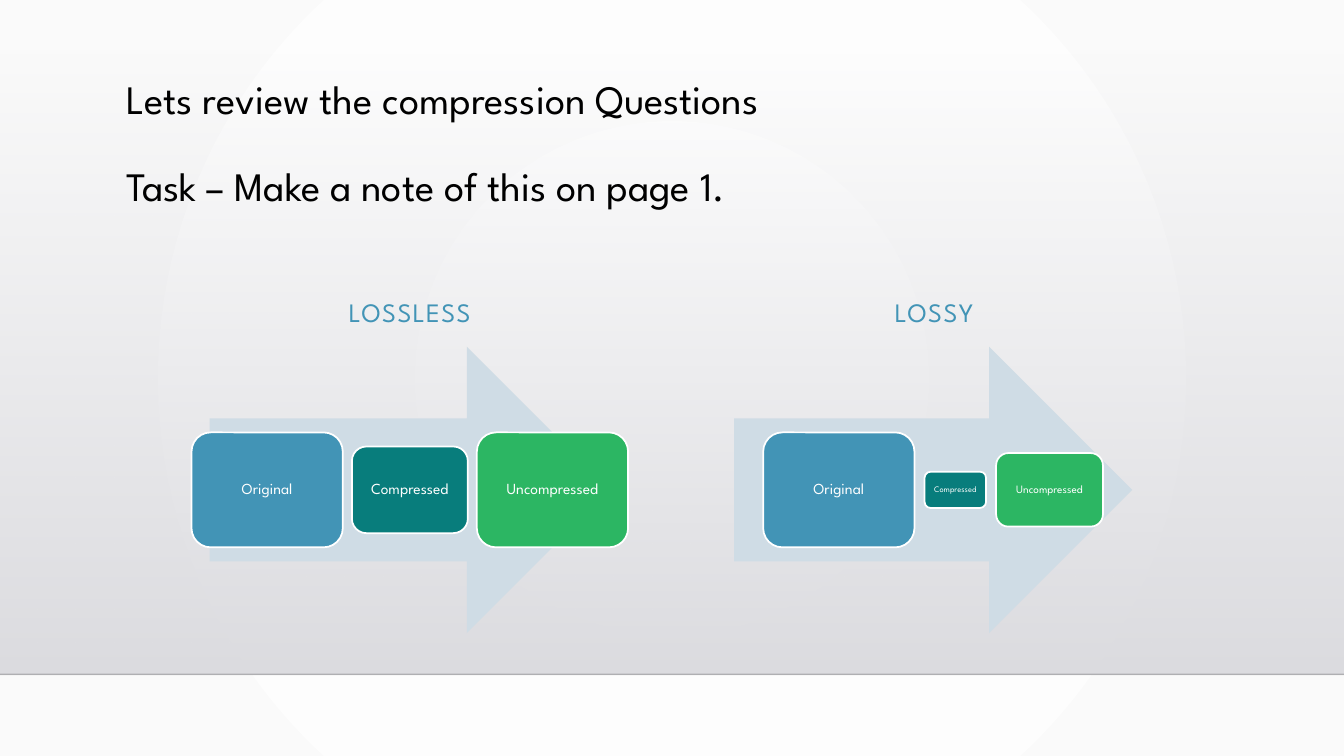
from lxml import etree
from pptx import Presentation
from pptx import util as u
from pptx.dml.color import RGBColor
from pptx.enum import shapes, text
from pptx.oxml import parse_xml
from pptx.oxml.ns import nsdecls, qn

FONT = "League Spartan"
BLACK = RGBColor(0x00, 0x00, 0x00)
WHITE = RGBColor(0xFF, 0xFF, 0xFF)
BLUE = RGBColor(0x42, 0x94, 0xB6)
TEAL = RGBColor(0x08, 0x7D, 0x7C)
GREEN = RGBColor(0x2C, 0xB6, 0x63)
PALE_BLUE = RGBColor(0xCF, 0xDC, 0xE5)
PANEL_TOP = RGBColor(0xDC, 0xDC, 0xE0)
PANEL_BOTTOM = RGBColor(0xDE, 0xDE, 0xE2)
RULE = RGBColor(0x00, 0x00, 0x01)

WIDTH, HEIGHT = 13.33, 7.5
PANEL_Y, FLOOR_Y = 0.51, 6.69
ARROW_Y, ARROW_H = 3.44, 2.84
MIDDLE_Y = ARROW_Y + ARROW_H / 2


def place(shape, left, top, width, height):
    shape.left, shape.top = u.Inches(left), u.Inches(top)
    shape.width, shape.height = u.Inches(width), u.Inches(height)


def style(para, size, color, spacing, align):
    para.alignment = align
    para.line_spacing = spacing
    para.font.name = FONT
    para.font.size = u.Pt(size)
    para.font.bold = False
    para.font.color.rgb = color


deck = Presentation()
deck.slide_width, deck.slide_height = u.Inches(WIDTH), u.Inches(HEIGHT)
page = deck.slides.add_slide(deck.slide_layouts.get_by_name("Comparison"))
title, left_label, left_body, right_label, right_body = page.placeholders
for unused in (left_body, right_body):
    unused.element.getparent().remove(unused.element)

# Background: soft radial gradient
page.element.cSld.insert(0, parse_xml(
    f'<p:bg {nsdecls("p", "a")}><p:bgPr><a:gradFill rotWithShape="1"><a:gsLst>'
    '<a:gs pos="0"><a:srgbClr val="FFFFFF"/></a:gs>'
    '<a:gs pos="100000"><a:srgbClr val="FAFAFA"/></a:gs></a:gsLst>'
    '<a:path path="circle"><a:fillToRect l="50000" t="50000" r="50000" b="50000"/></a:path>'
    '</a:gradFill><a:effectLst/></p:bgPr></p:bg>'))

# Wall panel fading in downwards, behind everything else
panel = page.shapes.add_shape(
    shapes.MSO_SHAPE.RECTANGLE, 0, u.Inches(PANEL_Y),
    deck.slide_width, u.Inches(FLOOR_Y - PANEL_Y))
panel.shadow.inherit = False
panel.line.fill.background()
panel.fill.gradient()
panel.fill.gradient_angle = 270
for stop, color, position in zip(panel.fill.gradient_stops, (PANEL_TOP, PANEL_BOTTOM), (0, 1)):
    stop.color.rgb = color
    stop.position = position
clear = panel.element.spPr.find(".//" + qn("a:srgbClr"))
etree.SubElement(clear, qn("a:alpha")).set("val", "0")

# Floor line
floor = page.shapes.add_connector(
    shapes.MSO_CONNECTOR.STRAIGHT, 0, u.Inches(FLOOR_Y),
    deck.slide_width, u.Inches(FLOOR_Y))
floor.line.width = u.Pt(1)
floor.line.color.rgb = RULE
tint = floor.element.spPr.find(".//" + qn("a:srgbClr"))
etree.SubElement(tint, qn("a:alpha")).set("val", "20000")
etree.SubElement(floor.element.spPr, qn("a:effectLst"))
for index, backdrop in enumerate((panel, floor)):
    page.shapes.element.insert(2 + index, backdrop.element)

# Title
place(title, 1.15, 0.74, 10.5, 1.15)
frame = title.text_frame
frame.text = "Lets review the compression Questions\nTask – Make a note of this on page 1."
frame.auto_size = text.MSO_AUTO_SIZE.NONE
frame.vertical_anchor = text.MSO_ANCHOR.TOP
for para in frame.paragraphs:
    style(para, 28.8, BLACK, 0.9, text.PP_ALIGN.LEFT)
frame.paragraphs[1].space_before = u.Pt(31)

# Diagrams: label, label left, arrow left and width, first box left, gap,
# then width, height and text size of each box
diagrams = [
    (left_label, "LOSSLESS", 1.73, 2.08, 3.97, 1.9, 0.09,
     [(1.5, 1.14, 11), (1.15, 0.86, 11), (1.5, 1.14, 11)]),
    (right_label, "LOSSY", 6.93, 7.28, 3.95, 7.57, 0.1,
     [(1.5, 1.14, 11), (0.61, 0.36, 6), (1.06, 0.73, 8)]),
]
stages = [("Original", BLUE), ("Compressed", TEAL), ("Uncompressed", GREEN)]

for label, name, label_x, arrow_x, arrow_w, box_x, gap, sizes in diagrams:
    place(label, label_x, 2.53, 4.67, 0.77)
    label.text_frame.text = name
    label.text_frame.auto_size = text.MSO_AUTO_SIZE.NONE
    label.text_frame.vertical_anchor = text.MSO_ANCHOR.BOTTOM
    para = label.text_frame.paragraphs[0]
    para.space_before = u.Pt(0)
    style(para, 19, BLUE, 1.2, text.PP_ALIGN.CENTER)
    para.runs[0].font._element.set("spc", "100")

    arrow = page.shapes.add_shape(
        shapes.MSO_SHAPE.RIGHT_ARROW, u.Inches(arrow_x), u.Inches(ARROW_Y),
        u.Inches(arrow_w), u.Inches(ARROW_H))
    arrow.shadow.inherit = False
    arrow.fill.solid()
    arrow.fill.fore_color.rgb = PALE_BLUE
    arrow.line.fill.background()

    for (stage, color), (box_w, box_h, size) in zip(stages, sizes):
        box = page.shapes.add_shape(
            shapes.MSO_SHAPE.ROUNDED_RECTANGLE, u.Inches(box_x),
            u.Inches(MIDDLE_Y - box_h / 2), u.Inches(box_w), u.Inches(box_h))
        box.shadow.inherit = False
        box.fill.solid()
        box.fill.fore_color.rgb = color
        box.line.color.rgb = WHITE
        box.line.width = u.Pt(1.25)
        frame = box.text_frame
        frame.word_wrap = True
        frame.vertical_anchor = text.MSO_ANCHOR.MIDDLE
        frame.margin_left = frame.margin_right = u.Inches(0.03)
        frame.margin_top = frame.margin_bottom = u.Inches(0.03)
        frame.text = stage
        style(frame.paragraphs[0], size, WHITE, 0.9, text.PP_ALIGN.CENTER)
        box_x += box_w + gap

deck.save("out.pptx")
